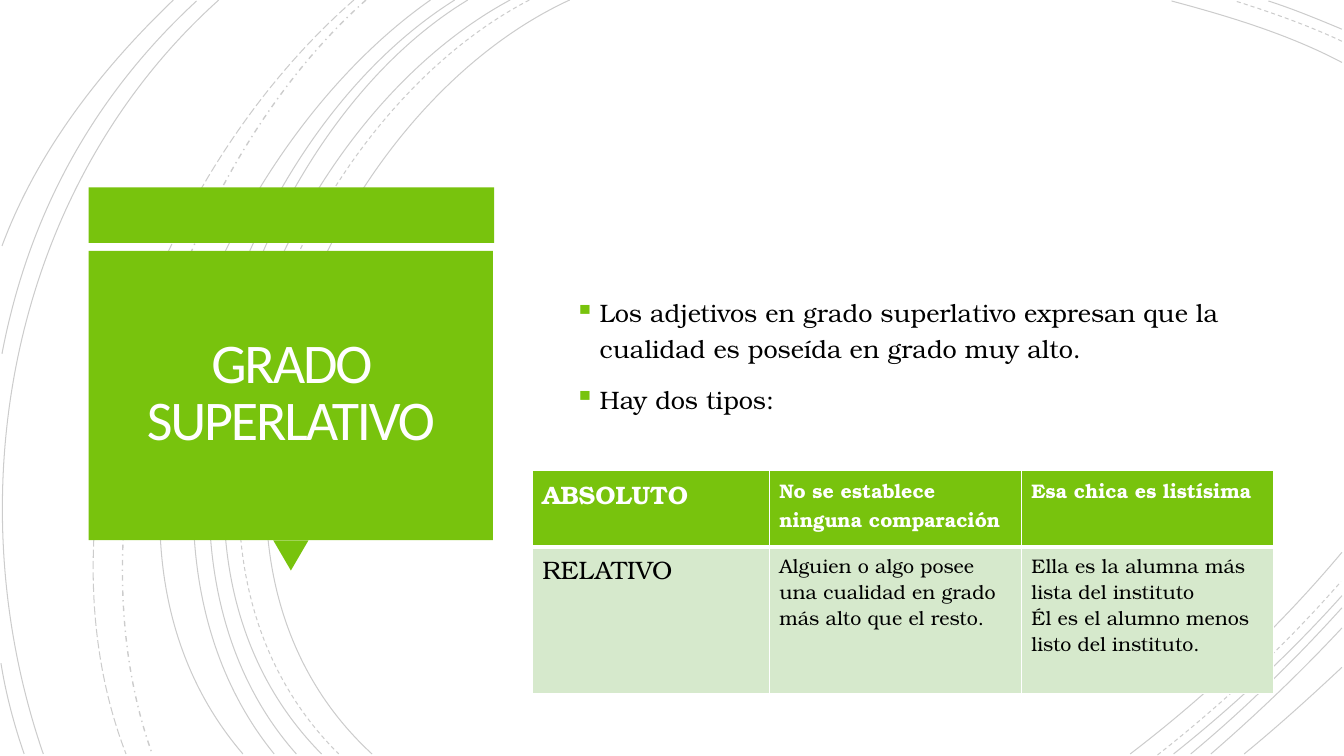
from dataclasses import dataclass
from lxml.etree import SubElement
from pptx import Presentation
from pptx.dml.color import RGBColor as Rgb
from pptx.enum.dml import MSO_LINE as Dash
from pptx.enum.shapes import MSO_SHAPE as Kind
from pptx.enum.text import MSO_ANCHOR as Anchor, PP_ALIGN as Align
from pptx.oxml.ns import qn
from pptx.util import Inches, Pt


@dataclass(frozen=True)
class Theme:
    green: str = "78C30D"
    pale: str = "D6E9CC"
    white: str = "FFFFFF"
    title: str = "FFFEFF"
    ink: str = "000000"
    head: str = "Calibri"
    body: str = "TeX Gyre Bonum"
    big: int = 40
    mid: int = 18
    small: int = 14


ARCS = [
    (5.65, 0, 3.15, 1.15, 1.43, 5.4, 3.69, 7.48),
    (13.31, 0.62, 12.78, 0.34, 12.18, 0.16, 11.62, 0.01),
    (11.21, 7.48, 11.97, 6.9, 12.69, 6.22, 13.31, 5.48),
    (5.06, 0, 2.7, 1.27, 1.1, 5.37, 3.19, 7.48),
    (13.31, 0.29, 13.07, 0.19, 12.83, 0.09, 12.58, 0.01),
    (11.64, 7.48, 12.23, 7.01, 12.8, 6.48, 13.31, 5.91),
    (4.64, 0, 2.44, 1.33, 1.1, 5.41, 2.94, 7.48),
    (11.81, 7.48, 12.34, 7.04, 12.84, 6.55, 13.31, 6.03),
    (4.51, 0, 2.31, 1.38, 0.97, 5.33, 2.72, 7.48),
    (12.01, 7.48, 12.46, 7.09, 12.9, 6.67, 13.31, 6.23),
    (4.27, 0, 2.17, 1.47, 0.53, 5.29, 2.41, 7.48),
    (12.34, 7.48, 12.67, 7.21, 12.99, 6.92, 13.31, 6.62),
    (2.17, 0, 0.11, 1.85, -0.46, 4.9, 0.43, 7.48),
    (1.95, 0.01, 0.92, 0.96, 0.28, 2.14, 0.02, 3.51),
    (0.01, 6.58, 0.06, 6.89, 0.14, 7.19, 0.24, 7.48),
    (1.72, 0, 1, 0.69, 0.37, 1.5, 0.02, 2.44),
]
DASHED = [
    (5.25, 0, 2.85, 1.25, 1.23, 5.37, 3.36, 7.48),
    (13.31, 0.41, 12.97, 0.25, 12.6, 0.12, 12.25, 0.01),
    (11.48, 7.49, 12.13, 6.98, 12.75, 6.4, 13.3, 5.77),
]
DOTTED = (3.63, 0, 1.76, 1.66, 0.65, 5.09, 1.51, 7.48)
LONG = (3.51, 0, 1.57, 1.69, 0.29, 4.99, 1.25, 7.48)

POINTS = [
    "Los adjetivos en grado superlativo expresan que la cualidad es poseída en grado muy alto.",
    "Hay dos tipos:",
]
TYPES = [
    ["ABSOLUTO", "No se establece ninguna comparación", "Esa chica es listísima"],
    ["RELATIVO", "Alguien o algo posee una cualidad en grado más alto que el resto.",
     "Ella es la alumna más lista del instituto\nÉl es el alumno menos listo del instituto."],
]


class Deck:
    def __init__(self, theme):
        self.theme = theme
        self.prs = Presentation()
        self.prs.slide_width, self.prs.slide_height = Inches(13.33), Inches(7.5)
        self.slide = self.prs.slides.add_slide(self.prs.slide_layouts[6])
        self.shapes = self.slide.shapes

    def arc(self, nums, dash=Dash.SOLID, width=0.75):
        pts = [(Inches(x), Inches(y)) for x, y in zip(nums[::2], nums[1::2])]
        pen = self.shapes.build_freeform(*pts[0], scale=1.0)
        pen.add_line_segments(pts[1:], close=False)
        shape = pen.convert_to_shape()
        steps = list(shape.element.iter(qn("a:lnTo")))
        curve = SubElement(steps[0].getparent(), qn("a:cubicBezTo"))
        for step in steps:
            curve.append(step[0])
            step.getparent().remove(step)
        shape.shadow.inherit = False
        shape.fill.background()
        line = shape.line
        line.color.rgb = Rgb.from_string(self.theme.ink)
        line.width, line.dash_style = Pt(width), dash
        tint = next(shape.element.spPr.find(qn("a:ln")).iter(qn("a:srgbClr")))
        SubElement(tint, qn("a:alpha"), val="20000")

    def block(self, kind, box, turn=0):
        shape = self.shapes.add_shape(kind, *map(Inches, box))
        shape.rotation = turn
        shape.shadow.inherit = False
        shape.fill.solid()
        shape.fill.fore_color.rgb = Rgb.from_string(self.theme.green)
        shape.line.fill.background()

    def style(self, par, font, size, color, bold=False):
        for run in par.runs:
            run.font.name, run.font.size, run.font.bold = font, Pt(size), bold
            run.font.color.rgb = Rgb.from_string(color)

    def frame(self, box, pads):
        frame = self.shapes.add_textbox(*map(Inches, box)).text_frame
        frame.word_wrap = True
        frame.vertical_anchor = Anchor.MIDDLE
        (frame.margin_left, frame.margin_top,
         frame.margin_right, frame.margin_bottom) = map(Inches, pads)
        return frame

    def title(self, text, box):
        frame = self.frame(box, [0.25] * 4)
        frame.text = text
        par = frame.paragraphs[0]
        par.alignment, par.line_spacing = Align.CENTER, 0.85
        self.style(par, self.theme.head, self.theme.big, self.theme.title)
        par.runs[0].font._element.set("spc", "-150")

    def bullets(self, lines, box):
        frame = self.frame(box, (0.1, 0.05, 0.1, 0.55))
        frame.text = "\n".join(lines)
        for par in frame.paragraphs:
            par.line_spacing, par.space_before = 1.2, Pt(10)
            self.style(par, self.theme.body, self.theme.mid, self.theme.ink)
            props = par._p.get_or_add_pPr()
            props.set("marL", str(Inches(0.25)))
            props.set("indent", str(Inches(-0.25)))
            tint = SubElement(props, qn("a:buClr"))
            SubElement(tint, qn("a:srgbClr"), val=self.theme.green)
            SubElement(props, qn("a:buSzPct"), val="110000")
            SubElement(props, qn("a:buChar"), char="▪")

    def edge(self, cell, side, width):
        line = SubElement(cell._tc.get_or_add_tcPr(), qn("a:ln" + side), w=str(Pt(width)))
        fill = SubElement(line, qn("a:solidFill"))
        SubElement(fill, qn("a:srgbClr"), val=self.theme.white)

    def table(self, rows, box, wide, high):
        look = self.theme
        grid = self.shapes.add_table(len(rows), len(wide), *map(Inches, box)).table
        grid.horz_banding = False
        for col, size in zip(grid.columns, wide):
            col.width = Inches(size)
        for row, size in zip(grid.rows, high):
            row.height = Inches(size)
        for r, row in enumerate(rows):
            top = r == 0
            for c, text in enumerate(row):
                cell = grid.cell(r, c)
                cell.text_frame.text = text
                for par in cell.text_frame.paragraphs:
                    self.style(par, look.body, look.small if c else look.mid,
                               look.white if top else look.ink, top)
                for side in "LRTB":
                    self.edge(cell, side, 3 if top and side == "B" else 1)
                cell.fill.solid()
                cell.fill.fore_color.rgb = Rgb.from_string(look.green if top else look.pale)


def main():
    deck = Deck(Theme())
    for arc in ARCS:
        deck.arc(arc)
    for arc in DASHED:
        deck.arc(arc, Dash.DASH)
    deck.arc(DOTTED, Dash.DASH_DOT, 1)
    deck.arc(LONG, Dash.LONG_DASH)
    deck.block(Kind.RECTANGLE, (0.88, 1.86, 4.02, 0.55))
    deck.block(Kind.ISOSCELES_TRIANGLE, (2.71, 5.36, 0.35, 0.3), 180)
    deck.block(Kind.RECTANGLE, (0.88, 2.49, 4.01, 2.87))
    deck.title("GRADO SUPERLATIVO", (0.97, 2.57, 3.83, 2.69))
    deck.bullets(POINTS, (5.6, 0.88, 6.87, 5.74))
    deck.table(TYPES, (5.28, 4.67, 7.35, 2.21), (2.35, 2.5, 2.5), (0.76, 1.45))
    deck.prs.save("out.pptx")


if __name__ == "__main__":
    main()
